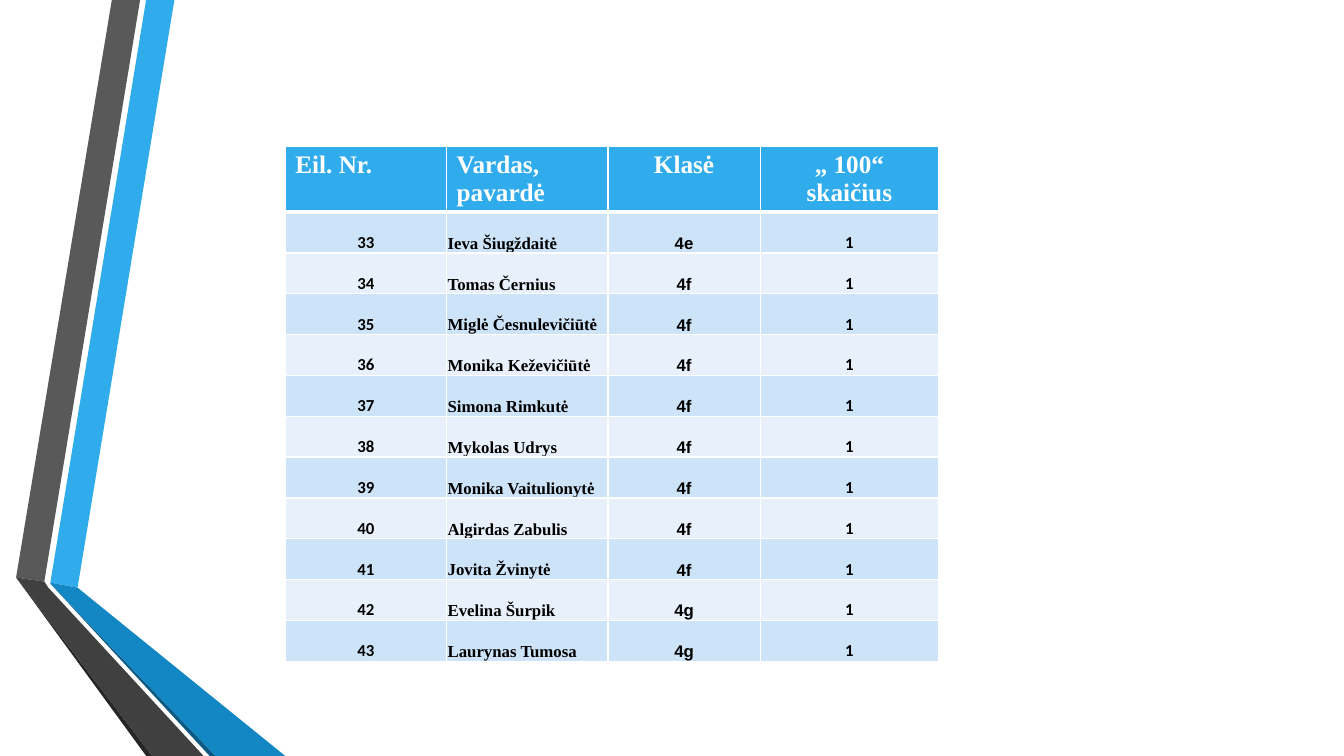
from lxml import etree
from pptx import Presentation
from pptx.dml.color import RGBColor
from pptx.enum.text import MSO_ANCHOR, PP_ALIGN
from pptx.oxml.ns import qn
from pptx.util import Inches, Pt

LEFT, CENTER = PP_ALIGN.LEFT, PP_ALIGN.CENTER
TOP, BOTTOM = MSO_ANCHOR.TOP, MSO_ANCHOR.BOTTOM

WHITE = RGBColor(0xFF, 0xFF, 0xFF)
BLACK = RGBColor(0x00, 0x00, 0x00)
BLUE = RGBColor(0x30, 0xAC, 0xEC)
MID_BLUE = RGBColor(0x12, 0x87, 0xC3)
DARK_BLUE = RGBColor(0x0C, 0x5A, 0x82)
GRAY = RGBColor(0x59, 0x59, 0x59)
DARK_GRAY = RGBColor(0x40, 0x40, 0x40)
CHARCOAL = RGBColor(0x26, 0x26, 0x26)
BANDS = (RGBColor(0xCD, 0xE3, 0xF8), RGBColor(0xE8, 0xF1, 0xFB))

RIBBONS = [
    (BLUE, [(0.5, 5.78), (0.77, 5.83), (1.73, 0), (1.45, 0)]),
    (GRAY, [(1.39, 0), (1.11, 0), (0.16, 5.73), (0.44, 5.77)]),
    (CHARCOAL, [(0.16, 5.73), (1.45, 7.5), (1.51, 7.5)]),
    (DARK_BLUE, [(0.5, 5.79), (2.08, 7.5), (2.14, 7.5)]),
    (MID_BLUE, [(0.5, 5.79), (2.14, 7.5), (2.83, 7.5), (0.77, 5.83), (0.5, 5.78)]),
    (DARK_GRAY, [(2.02, 7.5), (0.48, 5.83), (0.44, 5.77), (0.16, 5.73), (1.51, 7.5)]),
]

HEADERS = ["Eil. Nr.", "Vardas, pavardė", "Klasė", "„ 100“ skaičius"]
HEADER_ALIGNS = [LEFT, LEFT, CENTER, CENTER]
BODY_ALIGNS = [CENTER, LEFT, CENTER, CENTER]
BODY_FONTS = ["Calibri", "Times New Roman", "Arial", "Calibri"]
COL_WIDTHS = [1.6, 1.6, 1.51, 1.77]
FIRST_NUMBER = 33
PUPILS = [
    ("Ieva Šiugždaitė", "4e"),
    ("Tomas Černius", "4f"),
    ("Miglė Česnulevičiūtė", "4f"),
    ("Monika Keževičiūtė", "4f"),
    ("Simona Rimkutė", "4f"),
    ("Mykolas Udrys", "4f"),
    ("Monika Vaitulionytė", "4f"),
    ("Algirdas Zabulis", "4f"),
    ("Jovita Žvinytė", "4f"),
    ("Evelina Šurpik", "4g"),
    ("Laurynas Tumosa", "4g"),
]


class SlideBuilder:
    header_font = "Times New Roman"
    header_size = 18
    body_size = 12
    thin, thick = 1, 3

    def __init__(self, s):
        self.s = s

    def ribbon(self, color, points):
        start, *rest = [(Inches(x), Inches(y)) for x, y in points]
        builder = self.s.shapes.build_freeform(*start)
        builder.add_line_segments(rest, close=True)
        sp = builder.convert_to_shape()
        sp.shadow.inherit = False
        sp.fill.solid()
        sp.fill.fore_color.rgb = color
        sp.line.fill.background()

    def borders(self, cell, top, bottom):
        tcPr = cell._tc.get_or_add_tcPr()
        widths = {"a:lnL": self.thin, "a:lnR": self.thin, "a:lnT": top, "a:lnB": bottom}
        for tag, width in widths.items():
            ln = etree.SubElement(tcPr, qn(tag), w=str(Pt(width)))
            fill = etree.SubElement(ln, qn("a:solidFill"))
            etree.SubElement(fill, qn("a:srgbClr"), val=str(WHITE))

    def cell(self, cell, text, font, size, color, align, fill):
        cell.fill.solid()
        cell.fill.fore_color.rgb = fill
        p = cell.text_frame.paragraphs[0]
        p.alignment = align
        r = p.add_run()
        r.text = text
        r.font.name = font
        r.font.size = Pt(size)
        r.font.bold = True
        r.font.color.rgb = color

    def header_cell(self, cell, text, align):
        self.borders(cell, self.thin, self.thick)
        cell.vertical_anchor = TOP
        self.cell(cell, text, self.header_font, self.header_size, WHITE, align, BLUE)

    def body_cell(self, cell, text, font, align, row):
        self.borders(cell, self.thick if row == 0 else self.thin, self.thin)
        cell.vertical_anchor = BOTTOM
        cell.margin_left = cell.margin_right = cell.margin_top = Inches(0.01)
        cell.margin_bottom = 0
        self.cell(cell, text, font, self.body_size, BLACK, align, BANDS[row % 2])

    def table(self, left, top, header_bottom, bottom):
        frame = self.s.shapes.add_table(
            len(PUPILS) + 1, len(HEADERS), Inches(left), Inches(top),
            Inches(sum(COL_WIDTHS)), Inches(bottom - top))
        table = frame.table
        for column, width in zip(table.columns, COL_WIDTHS):
            column.width = Inches(width)
        for row in table.rows:
            row.height = Inches((bottom - header_bottom) / len(PUPILS))
        table.rows[0].height = Inches(header_bottom - top)
        for col, (text, align) in enumerate(zip(HEADERS, HEADER_ALIGNS)):
            self.header_cell(table.cell(0, col), text, align)
        for row, (name, group) in enumerate(PUPILS):
            values = [str(FIRST_NUMBER + row), name, group, "1"]
            for col, text in enumerate(values):
                self.body_cell(table.cell(row + 1, col), text,
                               BODY_FONTS[col], BODY_ALIGNS[col], row)


def main():
    prs = Presentation()
    prs.slide_width, prs.slide_height = Inches(13.33), Inches(7.5)
    builder = SlideBuilder(prs.slides.add_slide(prs.slide_layouts[6]))
    for color, points in RIBBONS:
        builder.ribbon(color, points)
    builder.table(2.83, 1.45, 2.1, 6.56)
    prs.save("out.pptx")


if __name__ == "__main__":
    main()
